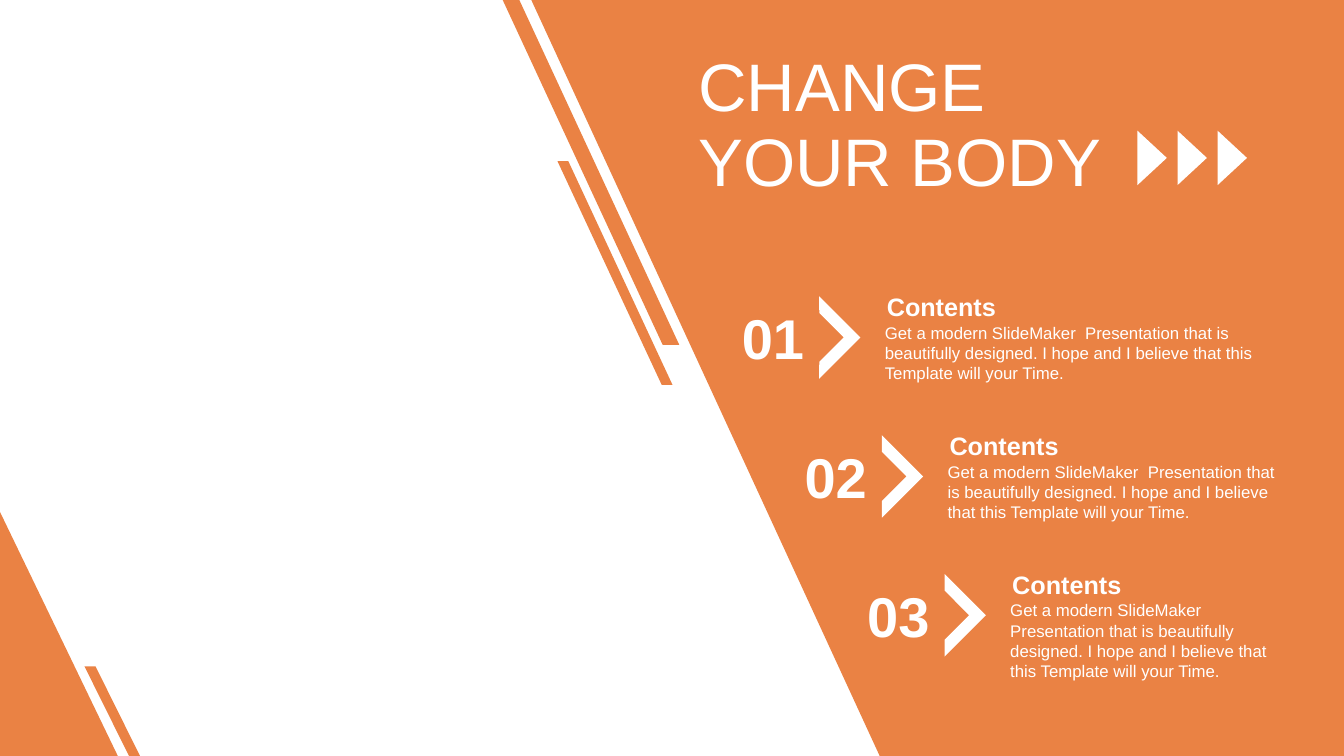
from pptx import Presentation
from pptx.dml.color import RGBColor
from pptx.enum import shapes, text
from pptx.util import Cm, Pt

ORANGE = RGBColor(0xEA, 0x82, 0x44)
WHITE = RGBColor(0xFF, 0xFF, 0xFF)
KIND = shapes.MSO_SHAPE
BODY = ("Get a modern SlideMaker  Presentation that is beautifully designed. "
        "I hope and I believe that this Template will your Time.")

deck = Presentation()
deck.slide_width, deck.slide_height = Cm(33.87), Cm(19.05)
slide = deck.slides.add_slide(deck.slide_layouts[6])
parts = slide.shapes


def add_form(kind, box, fill, turn=0, adjs=()):
    form = parts.add_shape(kind, *[Cm(n) for n in box])
    form.shadow.inherit = False
    form.fill.solid()
    form.fill.fore_color.rgb = fill
    form.line.fill.background()
    form.rotation = turn
    for i, adj in enumerate(adjs):
        form.adjustments[i] = adj
    return form


def add_label(words, box, size, bold=False, side=0.25, wrap=True, align=None):
    frame = parts.add_textbox(*[Cm(n) for n in box]).text_frame
    frame.word_wrap = wrap
    frame.auto_size = text.MSO_AUTO_SIZE.SHAPE_TO_FIT_TEXT
    frame.margin_left = frame.margin_right = Cm(side)
    frame.text = words
    line = frame.paragraphs[0]
    line.alignment = align
    font = line.runs[0].font
    font.name, font.size, font.bold = "Arial", Pt(size), bold
    font.color.rgb = WHITE


# Slanted panel on the right
pen = parts.build_freeform(Cm(13.39), 0)
pen.add_line_segments([(Cm(33.87), 0), (Cm(33.87), Cm(19.05)),
                       (Cm(22.17), Cm(19.05))])
panel = pen.convert_to_shape()
panel.shadow.inherit = False
panel.fill.solid()
panel.fill.fore_color.rgb = ORANGE
panel.line.fill.background()

# Corner triangle and slanted stripes
add_form(KIND.RIGHT_TRIANGLE, (0, 12.9, 2.97, 6.15), ORANGE)
for box, slant in [((12.67, 0, 4.45, 8.69), 0.906),
                   ((14.05, 4.06, 2.9, 5.64), 0.906),
                   ((2.13, 16.79, 1.4, 2.26), 0.802)]:
    stripe = add_form(KIND.PARALLELOGRAM, box, ORANGE, adjs=[slant])
    stripe._element.spPr.xfrm.set("flipH", "1")

# Numbered items, each stepping down and to the right
for i in range(3):
    dx, dy = 1.58 * i, 3.5 * i
    left, wide = 22.05 + dx, 10.57 - 1.54 * i
    add_label(BODY, (left, 8 + dy, wide, 1.8), 12)
    add_label("Contents", (left, 7.21 + dy, wide, 1.02), 18, True, 0.3)
    add_label(f"{i + 1:02}", (18.39 + dx, 7.52 + dy, 2.18, 1.96), 40, True,
              0.3, False, text.PP_ALIGN.CENTER)
    add_form(KIND.HALF_FRAME, (19.91 + dx, 7.77 + dy, 1.47, 1.47), WHITE,
             135, (0.204, 0.201))

# Title
for i, words in enumerate(["CHANGE", "YOUR BODY"]):
    add_label(words, (17.35, 1 + 1.88 * i, 11.07, 2.31), 48)

# Arrow row beside the title
for i in range(3):
    add_form(KIND.ISOSCELES_TRIANGLE, (28.35 + 1.01 * i, 3.61, 1.37, 0.74),
             WHITE, 90)

deck.save("out.pptx")
